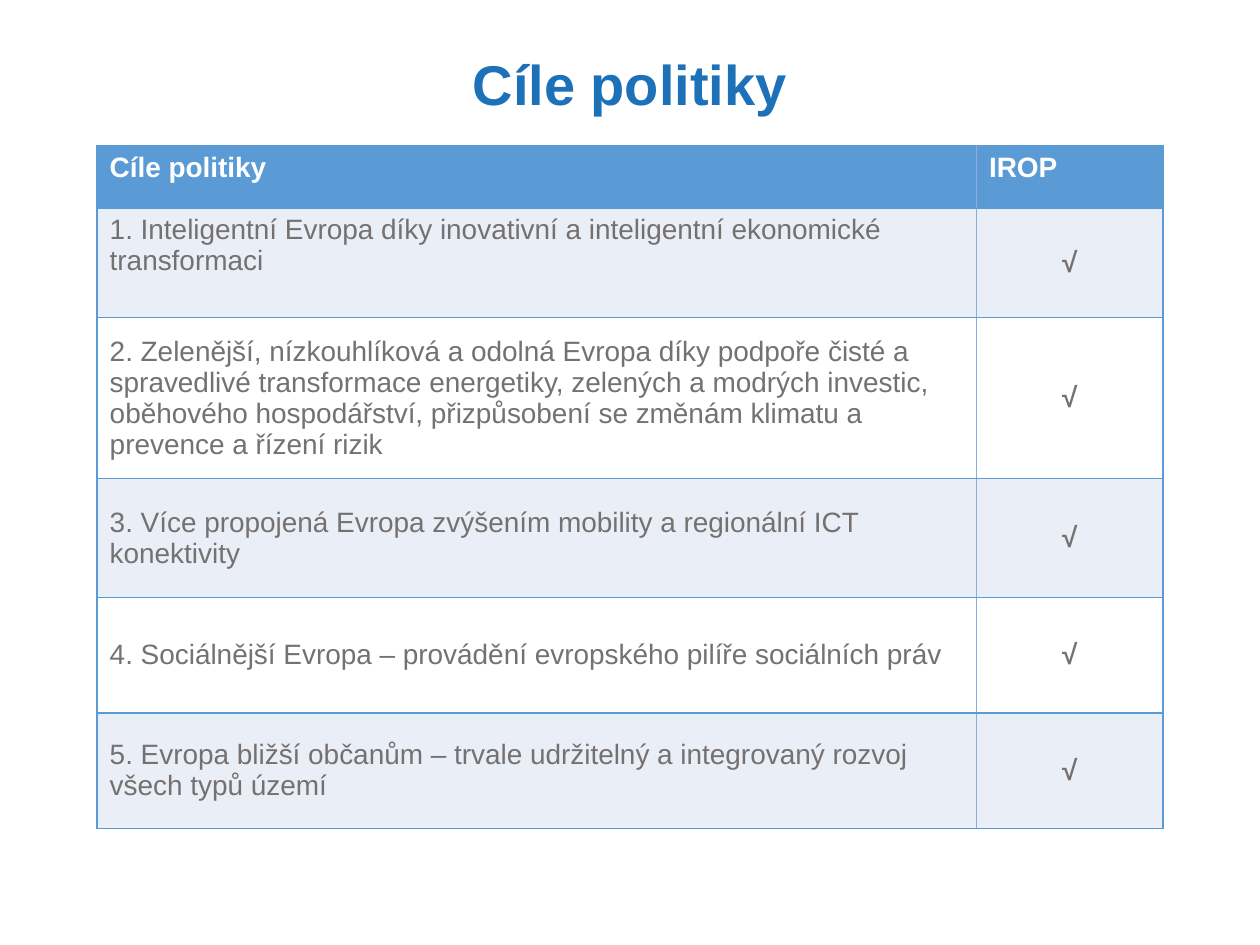
from lxml import etree
from pptx import Presentation
from pptx.dml.color import RGBColor
from pptx.enum.text import MSO_ANCHOR, PP_ALIGN
from pptx.oxml.ns import qn
from pptx.util import Pt

LEFT, CENTER = PP_ALIGN.LEFT, PP_ALIGN.CENTER
TOP, MIDDLE = MSO_ANCHOR.TOP, MSO_ANCHOR.MIDDLE
TITLE_ONLY = 5

COLORS = {
    "title": "1D71B8",
    "accent": "5B9BD5",
    "divider": "8FAADC",
    "band": "EAEFF7",
    "white": "FFFFFF",
    "body": "767171",
}
HEADINGS = ("Cíle politiky", "IROP")
CHECK = "√"
# Goal, row height, vertical anchor of the goal
GOALS = [
    ("1. Inteligentní Evropa díky inovativní a inteligentní ekonomické "
     "transformaci", 62.5, TOP),
    ("2. Zelenější, nízkouhlíková a odolná Evropa díky podpoře čisté a "
     "spravedlivé transformace energetiky, zelených a modrých investic, "
     "oběhového hospodářství, přizpůsobení se změnám klimatu a "
     "prevence a řízení rizik", 92, MIDDLE),
    ("3. Více propojená Evropa zvýšením mobility a regionální ICT "
     "konektivity", 68, MIDDLE),
    ("4. Sociálnější Evropa – provádění evropského pilíře sociálních práv",
     66, MIDDLE),
    ("5. Evropa bližší občanům – trvale udržitelný a integrovaný rozvoj "
     "všech typů území", 66, MIDDLE),
]
HEADER_HEIGHT = 35.5
CHECK_WIDTH = 106.5


def write(frame, text, size=16, color="body", bold=False, align=LEFT,
          spacing=None):
    paragraph = frame.paragraphs[0]
    paragraph.alignment = align
    if spacing:
        paragraph.line_spacing = spacing
    run = paragraph.add_run()
    run.text = text
    run.font.name = "Arial"
    run.font.size = Pt(size)
    run.font.bold = bold
    run.font.color.rgb = RGBColor.from_string(COLORS[color])


def set_borders(cell, **sides):
    """Draw 1 pt borders; they must come before the fill in the cell XML."""
    properties = cell._tc.get_or_add_tcPr()
    for index, side in enumerate("LRTB"):
        line = etree.Element(qn(f"a:ln{side}"), w=str(Pt(1)))
        fill = etree.SubElement(line, qn("a:solidFill"))
        etree.SubElement(fill, qn("a:srgbClr"), val=COLORS[sides[side]])
        properties.insert(index, line)


def fill_cell(cell, text, fill, anchor, **text_format):
    cell.fill.solid()
    cell.fill.fore_color.rgb = RGBColor.from_string(COLORS[fill])
    cell.vertical_anchor = anchor
    write(cell.text_frame, text, **text_format)


def add_title(slide, left, top, width, height):
    title = slide.shapes.title
    title.left, title.top = Pt(left), Pt(top)
    title.width, title.height = Pt(width), Pt(height)
    title.text_frame.vertical_anchor = MIDDLE
    write(title.text_frame, "Cíle politiky", size=32, color="title",
          bold=True, align=CENTER, spacing=0.9)


def add_goals_table(slide, left, top, width):
    heights = [HEADER_HEIGHT] + [height for _, height, _ in GOALS]
    table = slide.shapes.add_table(
        len(heights), len(HEADINGS), Pt(left), Pt(top), Pt(width),
        Pt(sum(heights))).table
    table.first_row = table.horz_banding = False
    table.columns[0].width = Pt(width - CHECK_WIDTH)
    table.columns[1].width = Pt(CHECK_WIDTH)
    for row, height in zip(table.rows, heights):
        row.height = Pt(height)

    # Header
    for column, heading in enumerate(HEADINGS):
        fill_cell(table.cell(0, column), heading, "accent", TOP,
                  color="white", bold=True)

    # Goals with their check marks
    for row, (goal, _, anchor) in enumerate(GOALS, start=1):
        fill = "band" if row % 2 else "white"
        fill_cell(table.cell(row, 0), goal, fill, anchor)
        fill_cell(table.cell(row, 1), CHECK, fill, MIDDLE, bold=True,
                  align=CENTER)

    # Borders
    for row in range(len(heights)):
        set_borders(table.cell(row, 0), L="accent", R="divider",
                    T="accent", B="accent")
        set_borders(table.cell(row, 1), L="divider", R="accent",
                    T="accent", B="accent")


def main():
    presentation = Presentation()
    presentation.slide_width, presentation.slide_height = Pt(720), Pt(540)
    slide = presentation.slides.add_slide(
        presentation.slide_layouts[TITLE_ONLY])
    add_title(slide, 49.5, 28, 621, 44)
    add_goals_table(slide, 55.5, 83.5, 609)
    presentation.save("out.pptx")


if __name__ == "__main__":
    main()
